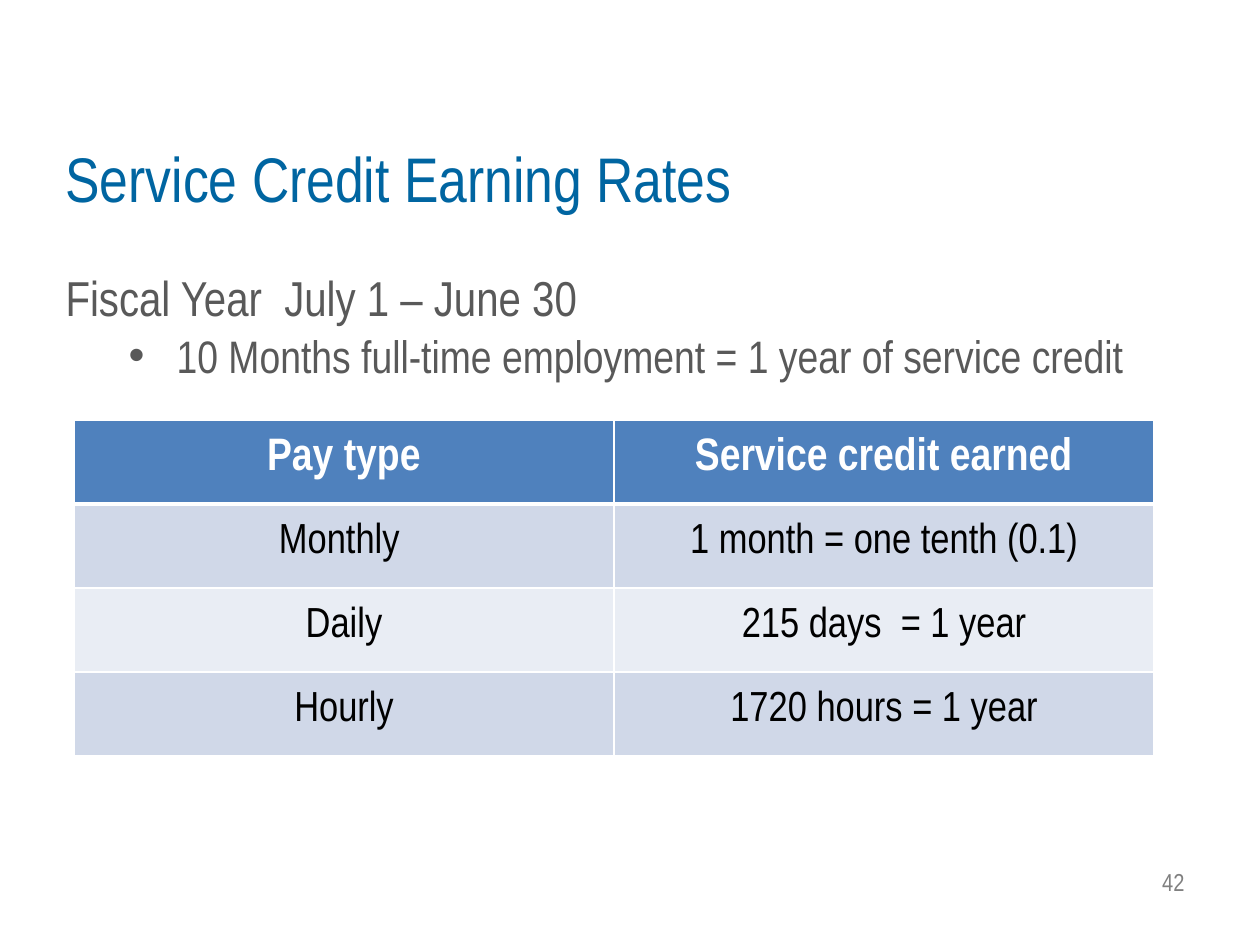
import pptx
import pptx.dml.color
import pptx.enum.text
import pptx.oxml
import pptx.oxml.ns
import pptx.util

RGBColor = pptx.dml.color.RGBColor
ALIGN = pptx.enum.text.PP_ALIGN
ANCHOR = pptx.enum.text.MSO_ANCHOR
Pt = pptx.util.Pt

TITLE_BLUE = RGBColor(0x00, 0x65, 0xA1)
BODY_GREY = RGBColor(0x59, 0x59, 0x59)
NUMBER_GREY = RGBColor(0x80, 0x80, 0x80)
HEADER_BLUE = RGBColor(0x4F, 0x81, 0xBD)
BAND_DARK = RGBColor(0xD0, 0xD8, 0xE8)
BAND_LIGHT = RGBColor(0xE9, 0xED, 0xF4)
WHITE = RGBColor(0xFF, 0xFF, 0xFF)
BLACK = RGBColor(0x00, 0x00, 0x00)

EMU_PER_PX = 914400 / 126


def px(length):
    return pptx.util.Emu(round(length * EMU_PER_PX))


def write(paragraph, text, size, color, align=ALIGN.LEFT, bold=False):
    run = paragraph.add_run()
    run.text = text
    run.font.name = "Arial Narrow"
    run.font.size = Pt(size)
    run.font.color.rgb = color
    run.font.bold = bold
    paragraph.alignment = align


prs = pptx.Presentation()
prs.slide_width, prs.slide_height = px(1260), px(945)
slide = prs.slides.add_slide(prs.slide_layouts[1])

# Title, body and slide number
title = slide.shapes.title
body = slide.placeholders[1]
number = slide.shapes.add_textbox(px(903), px(861), px(294), px(43))
frames = [
    (title, {"left": 53, "top": 136, "width": 1124, "height": 82}),
    (body, {"left": 53, "top": 261, "width": 1124, "height": 140}),
]
for placeholder, box in frames:
    for side, length in box.items():
        setattr(placeholder, side, px(length))
for shape in (title, body, number):
    shape.text_frame.word_wrap = True
    shape.text_frame.auto_size = pptx.enum.text.MSO_AUTO_SIZE.NONE

title.text_frame.vertical_anchor = ANCHOR.MIDDLE
write(title.text_frame.paragraphs[0], "Service Credit Earning Rates", 36, TITLE_BLUE)

fiscal_year = body.text_frame.paragraphs[0]
fiscal_props = fiscal_year._p.get_or_add_pPr()
fiscal_props.set("marL", "0")
fiscal_props.set("indent", "0")
fiscal_year.space_before = Pt(0)
fiscal_props.append(pptx.oxml.parse_xml(f'<a:buNone {pptx.oxml.ns.nsdecls("a")}/>'))
write(fiscal_year, "Fiscal Year  July 1 – June 30", 28, BODY_GREY)

employment = body.text_frame.add_paragraph()
employment.level = 1
employment.space_before = Pt(1)
employment_props = employment._p.get_or_add_pPr()
employment_props.set("marL", str(px(111)))
employment_props.set("indent", str(px(-48)))
for bullet in ('buFont {} typeface="Arial"', 'buChar {} char="•"'):
    employment_props.append(
        pptx.oxml.parse_xml("<a:" + bullet.format(pptx.oxml.ns.nsdecls("a")) + "/>"))
write(employment, "10 Months full-time employment = 1 year of service credit", 26, BODY_GREY)

write(number.text_frame.paragraphs[0], "42", 14, NUMBER_GREY, ALIGN.RIGHT)

# Earning rates table
rates = [
    ("Pay type", "Service credit earned"),
    ("Monthly ", "1 month = one tenth (0.1)"),
    ("Daily", "215 days  = 1 year"),
    ("Hourly", "1720 hours = 1 year"),
]
row_fills = [HEADER_BLUE, BAND_DARK, BAND_LIGHT, BAND_DARK]
table = slide.shapes.add_table(
    len(rates), 2, px(74), px(420), px(1080), px(336)).table

for r, (rate, fill) in enumerate(zip(rates, row_fills)):
    is_header = r == 0
    table.rows[r].height = px(84)
    for c, text in enumerate(rate):
        cell = table.cell(r, c)
        cell.fill.solid()
        cell.fill.fore_color.rgb = fill
        cell.vertical_anchor = ANCHOR.MIDDLE
        cell.margin_top, cell.margin_bottom = px(6), px(13)
        write(cell.text_frame.paragraphs[0], text, 26 if is_header else 24,
              WHITE if is_header else BLACK, ALIGN.CENTER, is_header)
        edges = {"lnL": 1, "lnR": 1, "lnT": 3 if r == 1 else 1, "lnB": 3 if is_header else 1}
        for position, (edge, points) in enumerate(edges.items()):
            cell._tc.get_or_add_tcPr().insert(position, pptx.oxml.parse_xml(
                f'<a:{edge} {pptx.oxml.ns.nsdecls("a")} w="{Pt(points)}">'
                f'<a:solidFill><a:srgbClr val="{WHITE}"/></a:solidFill></a:{edge}>'))

prs.save("out.pptx")
